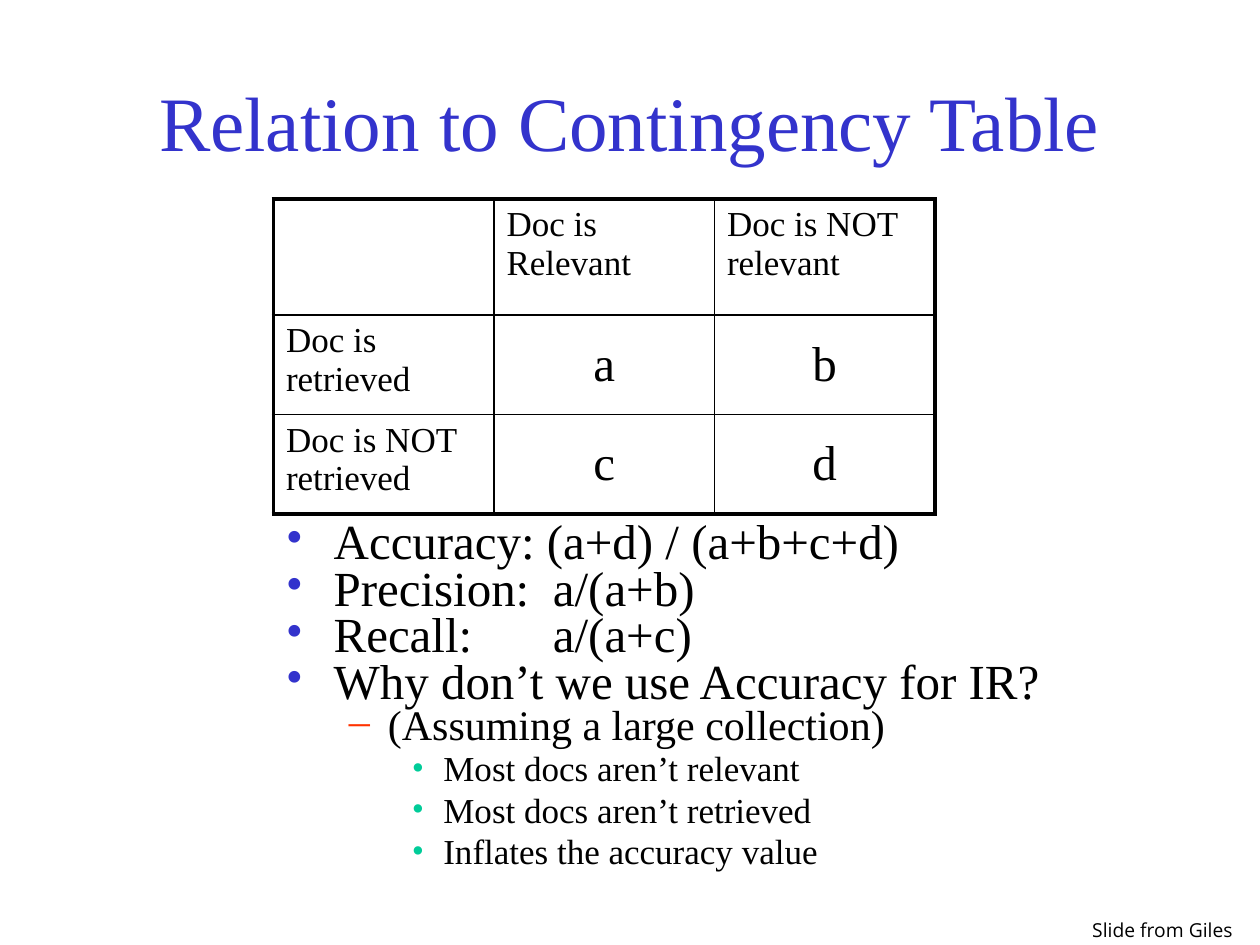
from lxml import etree
from pptx import Presentation
from pptx.dml.color import RGBColor
from pptx.enum.text import MSO_ANCHOR as Anchor, PP_ALIGN as Align
from pptx.oxml.ns import qn
from pptx.util import Inches, Pt

BLACK = RGBColor(0x00, 0x00, 0x00)
BLUE = RGBColor(0x33, 0x33, 0xCC)
ORANGE = RGBColor(0xFF, 0x33, 0x00)
GREEN = RGBColor(0x00, 0xCC, 0x99)
SERIF, SANS = "Times New Roman", "Open Sans"

# Content
TITLE = "Relation to Contingency Table"
CREDIT = "Slide from Giles"
TABLE = [
    ["", "Doc is Relevant", "Doc is NOT relevant"],
    ["Doc is retrieved", "a", "b"],
    ["Doc is NOT retrieved", "c", "d"],
]
BULLETS = [
    (0, "Accuracy: (a+d) / (a+b+c+d)"),
    (0, "Precision:\ta/(a+b)"),
    (0, "Recall:\ta/(a+c)"),
    (0, "Why don’t we use Accuracy for IR?"),
    (1, "(Assuming a large collection)"),
    (2, "Most docs aren’t relevant"),
    (2, "Most docs aren’t retrieved"),
    (2, "Inflates the accuracy value"),
]

# Layout and formats
LEFT = 2.17
COLUMN_WIDTH = 1.75
ROW_HEIGHTS = [0.92, 0.79, 0.79]
THICK, THIN = 2.25, 1
FORMULA_TAB = 2.12
SPACE_BEFORE = 0.23  # share of the font size
LEVELS = [
    {"size": 28, "margin": 0.38, "hang": 0.38, "spacing": 0.6, "mark": "•", "color": BLUE},
    {"size": 24, "margin": 0.81, "hang": 0.31, "spacing": 0.6, "mark": "–", "color": ORANGE},
    {"size": 20, "margin": 1.25, "hang": 0.25, "spacing": 0.8, "mark": "•", "color": GREEN},
]


def write(paragraph, text, size, font=SERIF, color=BLACK, **formats):
    run = paragraph.add_run()
    run.text = text
    run.font.size = Pt(size)
    run.font.name = font
    run.font.color.rgb = color
    for name, value in formats.items():
        setattr(paragraph, name, value)


def add_text_frame(slide, left, top, width, height, wrap=True):
    box = slide.shapes.add_textbox(*map(Inches, (left, top, width, height)))
    box.text_frame.word_wrap = wrap
    return box.text_frame


def add_child(parent, tag, **attributes):
    child = etree.SubElement(parent, qn(tag))
    for name, value in attributes.items():
        child.set(name, str(value))
    return child


def set_bullet(paragraph, level, has_tab):
    properties = paragraph._p.get_or_add_pPr()
    properties.set("marL", str(Inches(level["margin"])))
    properties.set("indent", str(-Inches(level["hang"])))
    add_child(add_child(properties, "a:buClr"), "a:srgbClr", val=level["color"])
    add_child(properties, "a:buFont", typeface=SERIF)
    add_child(properties, "a:buChar", char=level["mark"])
    if has_tab:
        tabs = add_child(properties, "a:tabLst")
        add_child(tabs, "a:tab", pos=Inches(FORMULA_TAB), algn="l")


def set_borders(cell, widths):
    properties = cell._tc.get_or_add_tcPr()
    for index, (side, width) in enumerate(widths.items()):
        line = etree.Element(qn(f"a:{side}"), w=str(Pt(width)))
        add_child(add_child(line, "a:solidFill"), "a:srgbClr", val=BLACK)
        properties.insert(index, line)


def add_title(slide):
    frame = add_text_frame(slide, 0.75, 0.33, 8.5, 1.25)
    frame.vertical_anchor = Anchor.MIDDLE
    write(frame.paragraphs[0], TITLE, 44, color=BLUE, alignment=Align.CENTER)


def add_contingency_table(slide):
    count = len(TABLE)
    shape = slide.shapes.add_table(
        count, count, Inches(LEFT), Inches(1.58),
        Inches(COLUMN_WIDTH * count), Inches(sum(ROW_HEIGHTS)))
    table = shape.table
    table.first_row = table.horz_banding = False
    for column in table.columns:
        column.width = Inches(COLUMN_WIDTH)
    last = count - 1
    for r, texts in enumerate(TABLE):
        table.rows[r].height = Inches(ROW_HEIGHTS[r])
        for c, text in enumerate(texts):
            cell = table.cell(r, c)
            cell.fill.background()
            # Heavy outer frame, thin inner grid
            set_borders(cell, {
                "lnL": THICK if c == 0 else THIN,
                "lnR": THICK if c == last else THIN,
                "lnT": THICK if r == 0 else THIN,
                "lnB": THICK if r == last else THIN,
            })
            if not text:
                continue
            is_count = r > 0 and c > 0
            size = 28 if is_count else 20
            cell.vertical_anchor = Anchor.MIDDLE if is_count else Anchor.TOP
            write(cell.text_frame.paragraphs[0], text, size,
                  alignment=Align.CENTER if is_count else Align.LEFT,
                  space_before=Pt(SPACE_BEFORE * size))


def add_bullets(slide):
    frame = add_text_frame(slide, LEFT, 4.17, 6.25, 3.33)
    for index, (depth, text) in enumerate(BULLETS):
        paragraph = frame.add_paragraph() if index else frame.paragraphs[0]
        level = LEVELS[depth]
        write(paragraph, text, level["size"], level=depth,
              line_spacing=level["spacing"],
              space_before=Pt(SPACE_BEFORE * level["size"]))
        set_bullet(paragraph, level, "\t" in text)


def main():
    presentation = Presentation()
    presentation.slide_width, presentation.slide_height = Inches(10), Inches(7.5)
    slide = presentation.slides.add_slide(presentation.slide_layouts[6])
    add_title(slide)
    add_bullets(slide)
    add_contingency_table(slide)
    # Credit in the corner
    frame = add_text_frame(slide, 8.57, 7.24, 1.42, 0.29, wrap=False)
    write(frame.paragraphs[0], CREDIT, 11, font=SANS)
    presentation.save("out.pptx")


if __name__ == "__main__":
    main()
